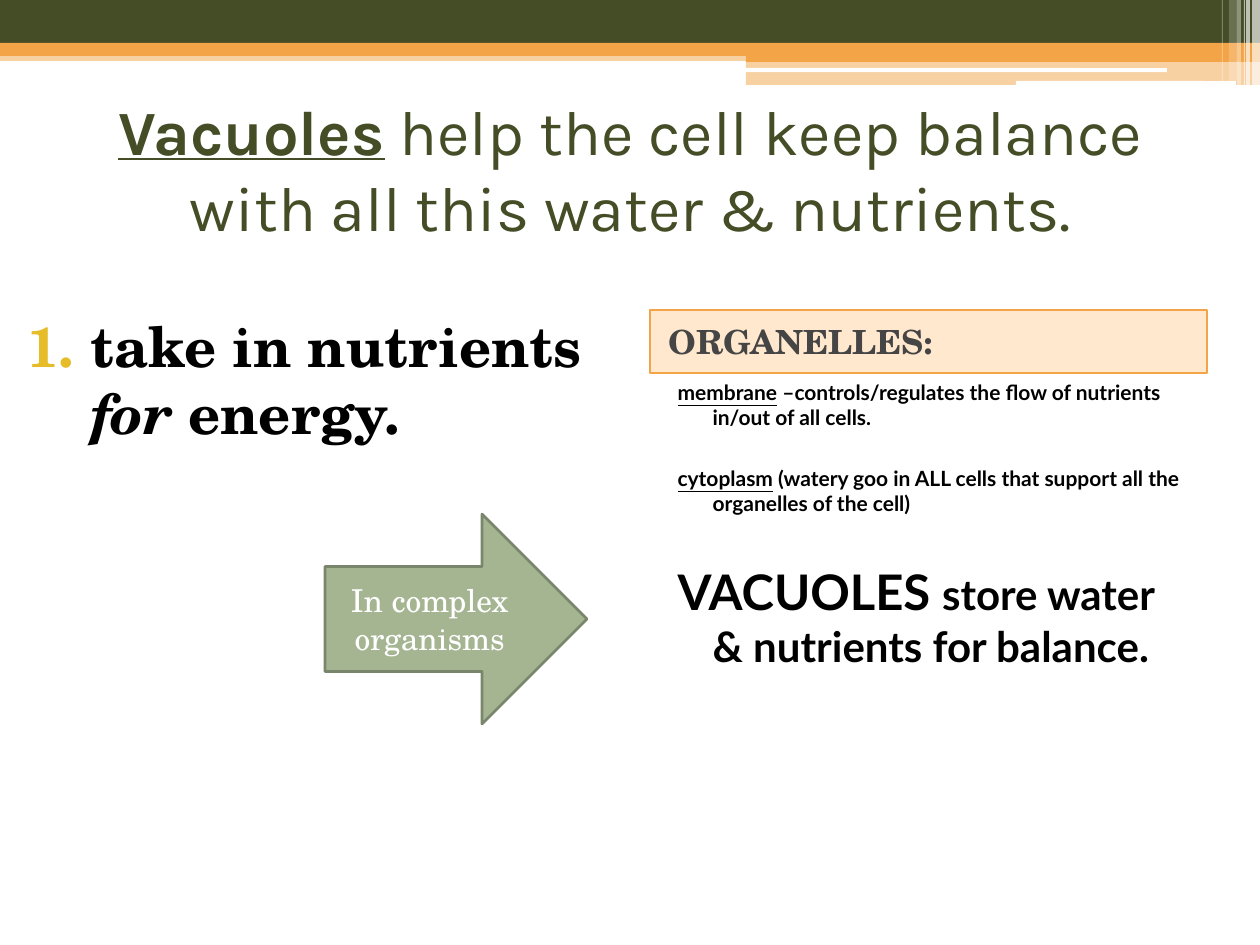
from dataclasses import dataclass

from lxml import etree
from pptx import Presentation
from pptx import util as u
from pptx.dml.color import RGBColor
from pptx.enum import shapes, text
from pptx.oxml.ns import qn


@dataclass(frozen=True)
class Theme:
    green: str = "444D26"
    orange: str = "F3A447"
    peach: str = "FFA53B"
    gold: str = "E7BC29"
    sage: str = "A5B592"
    moss: str = "7A866C"
    gray: str = "454545"
    black: str = "000000"
    white: str = "FFFFFF"
    head: str = "Karla"
    serif: str = "TeX Gyre Schola"
    sans: str = "Lato"
    title: int = 36
    point: int = 32
    label: int = 19
    arrow: int = 18
    note: int = 12
    big: int = 28
    mid: int = 24
    gap: int = 3


T = Theme()
KIND = shapes.MSO_SHAPE


def px(n):
    return u.Inches(n / 126)


def paint(shape, color, alpha=100, line=None, width=1):
    shape.fill.solid()
    shape.fill.fore_color.rgb = RGBColor.from_string(color)
    if alpha < 100:
        tone = shape.fill._xPr.find(qn("a:solidFill"))[0]
        etree.SubElement(tone, qn("a:alpha"), val=str(alpha * 1000))
    if line:
        shape.line.color.rgb = RGBColor.from_string(line)
        shape.line.width = u.Pt(width)
    else:
        shape.line.fill.background()


def add(slide, kind, box):
    shape = slide.shapes.add_shape(kind, *map(px, box))
    shape.shadow.inherit = False
    return shape


def place(shape, box):
    shape.left, shape.top, shape.width, shape.height = map(px, box)


def frame(shape, anchor):
    area = shape.text_frame
    area.word_wrap = True
    area.auto_size = text.MSO_AUTO_SIZE.NONE
    area.vertical_anchor = anchor
    return area


def write(para, runs, face, color, size, bold=True):
    """Fill a paragraph from (words, changed font settings) pairs."""
    for words, marks in runs:
        run = para.add_run()
        run.text = words
        font = run.font
        font.name, font.size, font.bold = face, u.Pt(size), bold
        font.color.rgb = RGBColor.from_string(color)
        for key, val in marks.items():
            setattr(font, key, val)


def layout(para, left, first, bullet=None, before=T.gap):
    """Set indents, the space above and an optional numbered bullet."""
    para.alignment = text.PP_ALIGN.LEFT
    para.space_before = u.Pt(before)
    props = para._p.get_or_add_pPr()
    props.set("marL", str(px(left)))
    props.set("indent", str(px(first)))
    if bullet:
        tone = etree.SubElement(props, qn("a:buClr"))
        etree.SubElement(tone, qn("a:srgbClr"), val=bullet)
        etree.SubElement(props, qn("a:buFont"), typeface=T.serif)
        etree.SubElement(props, qn("a:buAutoNum"), type="arabicPeriod")
    else:
        etree.SubElement(props, qn("a:buNone"))


def banner(slide, box):
    x, y, w, _ = box
    bars = [
        (0, 50, w, 11, T.orange, 50),
        (0, 0, w, 43, T.green, 100),
        (0, 43, w, 13, T.orange, 100),
        (746, 49, 514, 13, T.orange, 100),
        (746, 60, 514, 25, T.orange, 50),
    ]
    slits = [(745, 68, 422, 4), (1016, 81, 220, 5)]
    stripes = [
        (1252, 8, 86, 65), (1246, 4, 86, 65), (1244, 1, 86, 60),
        (1237, 4, 86, 40), (1229, 8, 81, 20), (1222, 1, 81, 30),
    ]
    for left, top, wide, high, color, alpha in bars:
        bar = add(slide, KIND.RECTANGLE, (x + left, y + top, wide, high))
        paint(bar, color, alpha)
    for left, top, wide, high in slits:
        slit = add(slide, KIND.ROUNDED_RECTANGLE,
                   (x + left, y + top, wide, high))
        paint(slit, T.white)
    for left, wide, high, alpha in stripes:
        stripe = add(slide, KIND.RECTANGLE, (x + left, y, wide, high))
        paint(stripe, T.white, alpha)


def heading(shape, box):
    place(shape, box)
    para = frame(shape, text.MSO_ANCHOR.MIDDLE).paragraphs[0]
    para.alignment = text.PP_ALIGN.CENTER
    runs = [
        ("Vacuoles", {"bold": True, "underline": True}),
        (" help the cell keep balance with all this water & nutrients.", {}),
    ]
    write(para, runs, T.head, T.green, T.title, False)


def points(shape, box):
    place(shape, box)
    para = frame(shape, text.MSO_ANCHOR.TOP).paragraphs[0]
    layout(para, 78, -63, T.gold)
    runs = [("take in nutrients ", {}), ("for", {"italic": True}),
            (" energy.", {})]
    write(para, runs, T.serif, T.black, T.point)


def panel(label, notes, box):
    """Place the label bar with the organelle notes below it."""
    x, y, w, h = box
    bar = 63
    place(label, (x, y, w, bar))
    paint(label, T.peach, 25, T.orange)
    para = frame(label, text.MSO_ANCHOR.MIDDLE).paragraphs[0]
    layout(para, 6, 0)
    write(para, [("ORGANELLES:", {})], T.serif, T.gray, T.label)

    place(notes, (x, y + bar, w, h - bar))
    area = frame(notes, text.MSO_ANCHOR.TOP)
    under = {"underline": True}
    items = [
        (T.gap, [("membrane", under),
                 (" –controls/regulates the flow of nutrients "
                  "in/out of all cells.", {})]),
        (20.4, [("cytoplasm", under),
                (" (watery goo in ALL cells that support all the "
                 "organelles of the cell)", {})]),
        (26.4, [("VACUOLES ", {"size": u.Pt(T.big)}),
                ("store water & nutrients for balance.",
                 {"size": u.Pt(T.mid)})]),
    ]
    for i, (before, runs) in enumerate(items):
        para = area.add_paragraph() if i else area.paragraphs[0]
        layout(para, 50, -35, before=before)
        write(para, runs, T.sans, T.black, T.note)


def arrow(slide, box):
    shape = add(slide, KIND.RIGHT_ARROW, box)
    paint(shape, T.sage, line=T.moss, width=1.5)
    para = frame(shape, text.MSO_ANCHOR.MIDDLE).paragraphs[0]
    para.alignment = text.PP_ALIGN.CENTER
    write(para, [("In complex organisms", {})],
          T.serif, T.white, T.arrow, False)


def main():
    deck = Presentation()
    deck.slide_width, deck.slide_height = px(1260), px(945)
    slide = deck.slides.add_slide(deck.slide_layouts.get_by_name("Comparison"))
    slots = {s.placeholder_format.idx: s for s in slide.placeholders}
    banner(slide, (0, 0, 1260, 86))
    heading(slots[0], (53, 105, 1155, 126))
    points(slots[2], (0, 305, 610, 605))
    panel(slots[1], slots[4], (650, 310, 557, 598))
    arrow(slide, (325, 514, 262, 210))
    for idx in (3, 10, 11, 12):
        if idx in slots:
            slots[idx].element.getparent().remove(slots[idx].element)
    deck.save("out.pptx")


if __name__ == "__main__":
    main()
